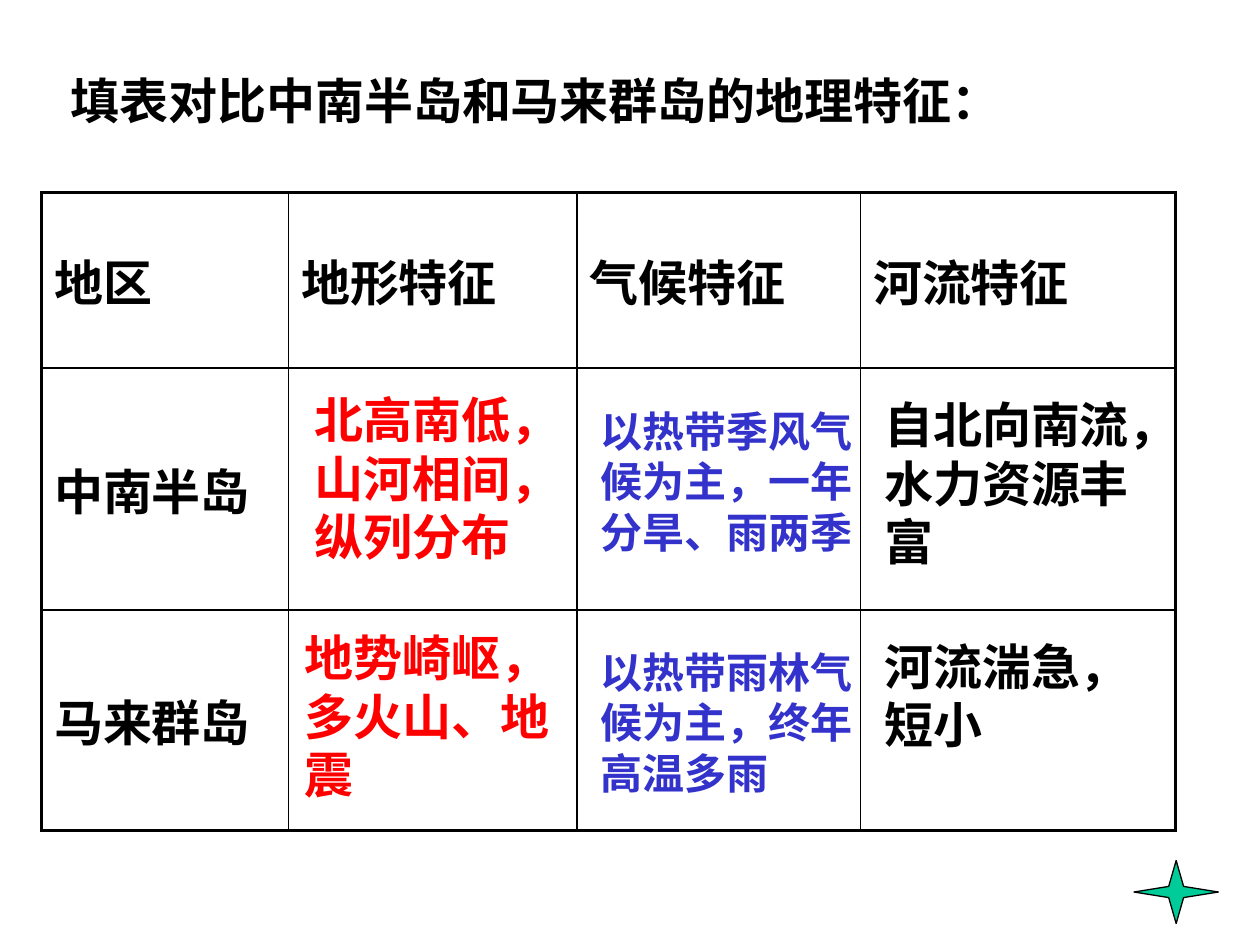
from lxml import etree
from pptx import Presentation
from pptx.dml.color import RGBColor
from pptx.enum.shapes import MSO_SHAPE
from pptx.enum.text import MSO_ANCHOR, MSO_AUTO_SIZE, PP_ALIGN
from pptx.oxml.ns import qn
from pptx.util import Inches, Pt

TITLE_ONLY = 5
MIDDLE = MSO_ANCHOR.MIDDLE
CENTER = PP_ALIGN.CENTER
NO_FIT = MSO_AUTO_SIZE.NONE
GROW = MSO_AUTO_SIZE.SHAPE_TO_FIT_TEXT
STAR = MSO_SHAPE.STAR_4_POINT

BLACK, RED, BLUE, GREEN = "000000", "FF0000", "3333CC", "00CC99"
FONT = "Times New Roman"
THIN, THICK = 1, 2.25

COLUMNS = [1.96, 2.29, 2.25, 2.5]
ROWS = [1.39, 1.92, 1.75]
HEADINGS = ["地区", "地形特征", "气候特征", "河流特征"]
REGIONS = ["中南半岛", "马来群岛"]

# text, box (left, top, width, height), size, colour
ANSWERS = [
    ("北高南低，山河相间，纵列分布", (2.4, 3.04, 2.28, 1.5), 28, RED),
    ("地势崎岖，多火山、地震", (2.32, 4.93, 2.19, 1.5), 28, RED),
    ("以热带季风气候为主，一年分旱、雨两季", (4.67, 3.17, 2.25, 1.3), 24, BLUE),
    ("以热带雨林气候为主，终年高温多雨", (4.67, 5.08, 2.25, 1.3), 24, BLUE),
    ("自北向南流，水力资源丰富", (6.92, 3.08, 2.33, 1.5), 28, BLACK),
    ("河流湍急，短小", (6.92, 5, 2.17, 1.03), 28, BLACK),
]


def colour(value):
    return RGBColor.from_string(value)


def inches(box):
    return [Inches(length) for length in box]


def write(frame, text, size=28, ink=BLACK):
    para = frame.paragraphs[0]
    span = para.add_run()
    span.text = text
    formats = {"name": FONT, "size": Pt(size), "bold": True}
    for name, value in formats.items():
        setattr(span.font, name, value)
    span.font.color.rgb = colour(ink)
    return para


def add_title(page, box):
    title = page.shapes.title
    title.left, title.top, title.width, title.height = inches(box)
    frame = title.text_frame
    frame.auto_size = NO_FIT
    frame.vertical_anchor = MIDDLE
    write(frame, "填表对比中南半岛和马来群岛的地理特征：").alignment = CENTER


def set_borders(cell, widths):
    """Draw black borders; widths maps the sides L, R, T, B to points."""
    properties = cell._tc.get_or_add_tcPr()
    for position, side in enumerate("LRTB"):
        line = etree.Element(qn(f"a:ln{side}"), w=str(Pt(widths[side])))
        fill = etree.SubElement(line, qn("a:solidFill"))
        etree.SubElement(fill, qn("a:srgbClr"), val=BLACK)
        properties.insert(position, line)


def add_comparison_table(page, box):
    table = page.shapes.add_table(len(ROWS), len(COLUMNS), *inches(box)).table
    table.first_row = table.horz_banding = False
    for column, width in zip(table.columns, COLUMNS):
        column.width = Inches(width)
    for row, height in zip(table.rows, ROWS):
        row.height = Inches(height)

    last_row, last_column = len(ROWS) - 1, len(COLUMNS) - 1
    for i in range(len(ROWS)):
        for j in range(len(COLUMNS)):
            cell = table.cell(i, j)
            cell.fill.background()
            cell.vertical_anchor = MIDDLE
            outer = {"L": j == 0, "R": j == last_column,
                     "T": i == 0, "B": i == last_row}
            set_borders(cell, {side: THICK if edge else THIN
                               for side, edge in outer.items()})

    for j, heading in enumerate(HEADINGS):
        write(table.cell(0, j).text_frame, heading)
    for i, region in enumerate(REGIONS, 1):
        write(table.cell(i, 0).text_frame, region)


def add_answer(page, text, box, size, ink):
    frame = page.shapes.add_textbox(*inches(box)).text_frame
    frame.word_wrap = True
    frame.auto_size = GROW
    write(frame, text, size, ink)


def add_star(page, box):
    star = page.shapes.add_shape(STAR, *inches(box))
    star.adjustments[0] = 0.125
    star.shadow.inherit = False
    star.fill.solid()
    star.fill.fore_color.rgb = colour(GREEN)
    star.line.color.rgb = colour(BLACK)
    star.line.width = Pt(0.75)


def main():
    deck = Presentation()
    deck.slide_width, deck.slide_height = Inches(10), Inches(7.5)
    page = deck.slides.add_slide(deck.slide_layouts[TITLE_ONLY])
    add_title(page, (0, 0.42, 8.5, 0.75))
    add_comparison_table(page, (0.33, 1.53, sum(COLUMNS), sum(ROWS)))
    for answer in ANSWERS:
        add_answer(page, *answer)
    add_star(page, (9, 6.83, 0.67, 0.5))
    deck.save("out.pptx")


if __name__ == "__main__":
    main()
